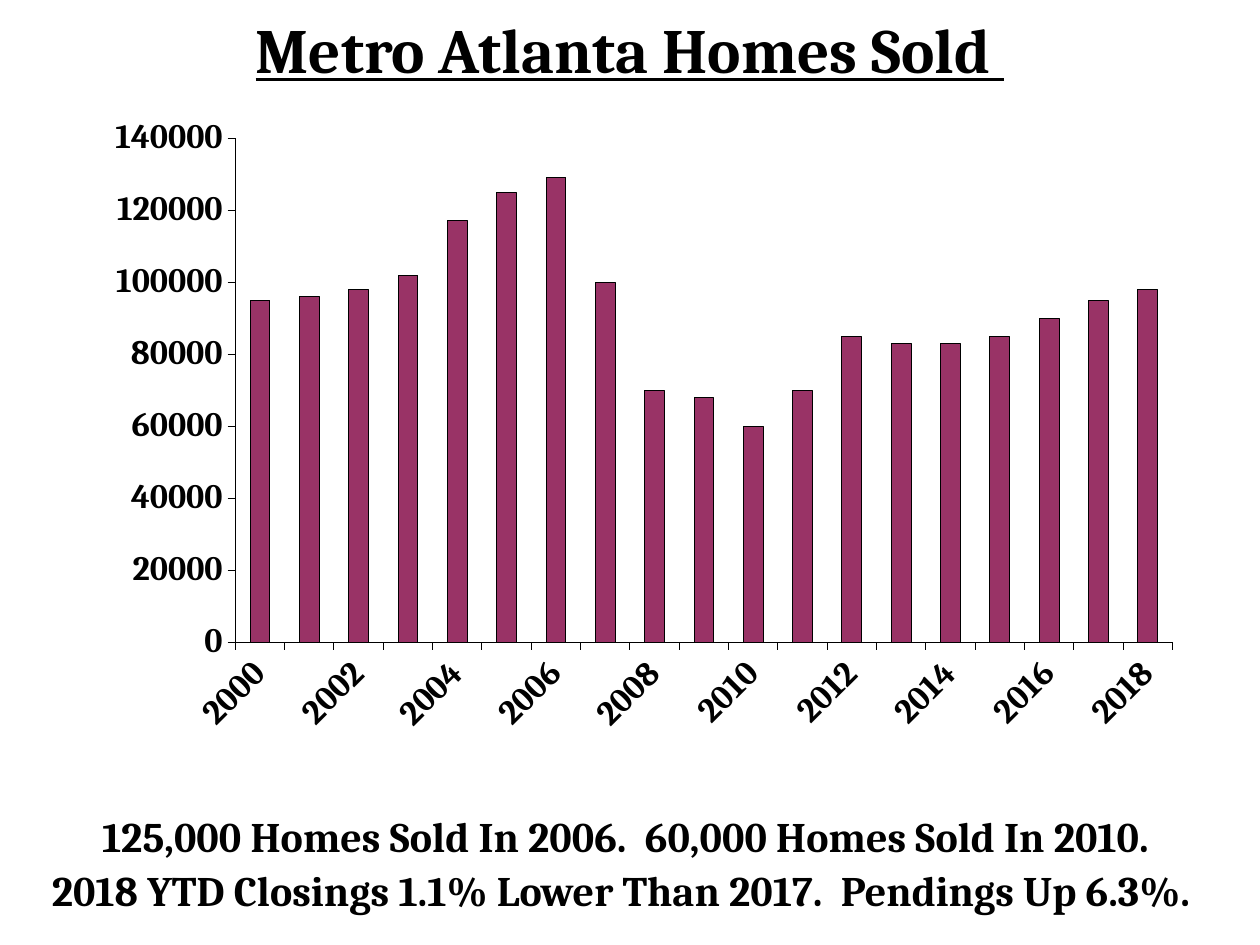
from lxml.etree import SubElement
from pptx import Presentation
from pptx.chart.data import CategoryChartData
from pptx.dml.color import RGBColor
from pptx.enum.chart import XL_CHART_TYPE, XL_TICK_LABEL_POSITION, XL_TICK_MARK
from pptx.enum.text import MSO_ANCHOR, PP_ALIGN
from pptx.oxml import parse_xml
from pptx.oxml.ns import nsdecls, qn
from pptx.util import Inches, Pt

TITLE = "Metro Atlanta Homes Sold "
CAPTION = [
    "125,000 Homes Sold In 2006.  60,000 Homes Sold In 2010. ",
    "2018 YTD Closings 1.1% Lower Than 2017.  Pendings Up 6.3%.  ",
]
FIRST_YEAR = 2000
HOMES_SOLD = [
    95000, 96000, 98000, 102000, 117000, 125000, 129000, 100000, 70000, 68000,
    60000, 70000, 85000, 83000, 83000, 85000, 90000, 95000, 98000,
]
PLOT_AREA = {"x": 0.134, "y": 0.098, "w": 0.855, "h": 0.733}
FONT = "Cambria"
BLACK, PLUM = "000000", "993366"


def color(hex_string):
    return RGBColor.from_string(hex_string)


def style_font(font, size):
    font.name = FONT
    font.size = Pt(size)
    font.bold = True
    font.color.rgb = color(BLACK)


def style_line(line):
    line.color.rgb = color(BLACK)
    line.width = Pt(0.25)


def add_text(slide, lines, left, top, width, height, size, anchor):
    box = slide.shapes.add_textbox(Inches(left), Inches(top), Inches(width), Inches(height))
    frame = box.text_frame
    frame.word_wrap = True
    frame.vertical_anchor = anchor
    for index, line in enumerate(lines):
        paragraph = frame.add_paragraph() if index else frame.paragraphs[0]
        paragraph.text = line
        paragraph.alignment = PP_ALIGN.CENTER
        style_font(paragraph.font, size)
    return frame.paragraphs


def set_plot_area(chart):
    """Fix the inner plot area as fractions of the chart."""
    plot_area = chart._chartSpace.chart.plotArea
    for old_layout in plot_area.findall(qn("c:layout")):
        plot_area.remove(old_layout)
    layout = parse_xml(f"<c:layout {nsdecls('c')}/>")
    manual = SubElement(layout, qn("c:manualLayout"))
    settings = [("layoutTarget", "inner"), ("xMode", "edge"), ("yMode", "edge")]
    for tag, value in settings + list(PLOT_AREA.items()):
        SubElement(manual, qn(f"c:{tag}")).set("val", str(value))
    plot_area.insert(0, layout)


def add_homes_chart(slide):
    data = CategoryChartData()
    data.categories = [str(FIRST_YEAR + index) for index in range(len(HOMES_SOLD))]
    data.add_series("Series 1", HOMES_SOLD)
    chart = slide.shapes.add_chart(
        XL_CHART_TYPE.COLUMN_CLUSTERED,
        Inches(0.7), Inches(0.56), Inches(8.7), Inches(5.46), data,
    ).chart
    chart.has_legend = False
    chart.has_title = False
    style_font(chart.font, 19.5)
    set_plot_area(chart)

    plot = chart.plots[0]
    plot.gap_width = 150
    plot.vary_by_categories = False
    series = plot.series[0]
    series.format.fill.solid()
    series.format.fill.fore_color.rgb = color(PLUM)
    style_line(series.format.line)

    years, homes = chart.category_axis, chart.value_axis
    for axis in (years, homes):
        axis.has_major_gridlines = False
        axis.major_tick_mark = XL_TICK_MARK.OUTSIDE
        axis.minor_tick_mark = XL_TICK_MARK.NONE
        style_font(axis.tick_labels.font, 19.5)
        style_line(axis.format.line)
    homes.minimum_scale = 0
    homes.maximum_scale = 140000
    homes.major_unit = 20000
    homes.tick_labels.number_format = "General"
    homes.tick_labels.number_format_is_linked = False

    years.tick_label_position = XL_TICK_LABEL_POSITION.LOW
    years_xml = years._element
    years_xml.find(qn("c:txPr")).find(qn("a:bodyPr")).set("rot", str(-45 * 60000))
    label_skip = parse_xml(f'<c:tickLblSkip {nsdecls("c")} val="2"/>')
    years_xml.find(qn("c:noMultiLvlLbl")).addprevious(label_skip)


def main():
    presentation = Presentation()
    presentation.slide_width = Inches(10)
    presentation.slide_height = Inches(7.5)
    slide = presentation.slides.add_slide(presentation.slide_layouts[6])

    add_homes_chart(slide)
    title = add_text(slide, [TITLE], 0, 0.17, 10, 0.42, 36, MSO_ANCHOR.MIDDLE)
    title[0].font.underline = True
    caption = add_text(slide, CAPTION, 0.25, 6.43, 9.5, 0.9, 24, MSO_ANCHOR.TOP)
    for paragraph in caption:
        paragraph.line_spacing = 0.9
    caption[1].space_before = Pt(4.8)

    presentation.save("out.pptx")


if __name__ == "__main__":
    main()
